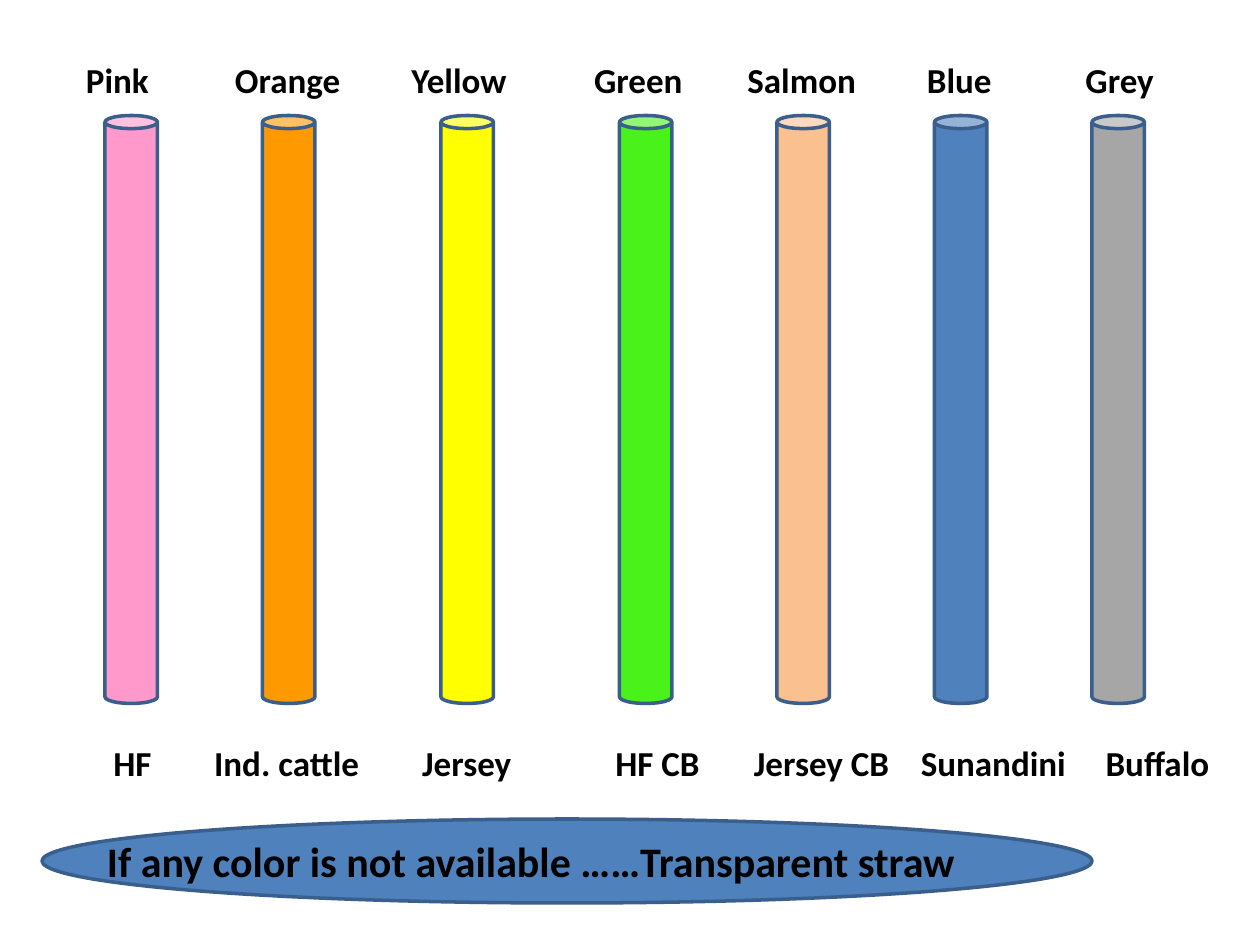
from dataclasses import dataclass

from lxml import etree
from pptx import Presentation
from pptx import util as u
from pptx.dml.color import RGBColor
from pptx.enum import shapes, text
from pptx.oxml.ns import qn

COLS, ROWS = 120, 90
CELL = u.Inches(10) // COLS


@dataclass(frozen=True)
class Theme:
    font: str = "Calibri"
    ink: str = "000000"
    accent: str = "4F81BD"
    outline: str = "3A5F8C"
    line_pt: float = 2
    label_pt: float = 20
    note_pt: float = 24


@dataclass(frozen=True)
class Straw:
    col: float
    fill: str
    color: str
    color_col: float
    breed: str
    breed_col: float


THEME = Theme()
STRAWS = [
    Straw(10, "FF99CC", "Pink", 8.2, "HF", 10.8),
    Straw(25, "FF9900", "Orange", 22.4, "Ind. cattle", 20.4),
    Straw(42, "FFFF00", "Yellow", 39.2, "Jersey", 40.2),
    Straw(59, "48F21A", "Green", 56.6, "HF CB", 58.6),
    Straw(74, "FAC090", "Salmon", 71.2, "Jersey CB", 71.8),
    Straw(89, THEME.accent, "Blue", 88.3, "Sunandini", 87.7),
    Straw(104, "A6A6A6", "Grey", 103.4, "Buffalo", 105.3),
]


def grid(*cells: float) -> list[int]:
    return [round(c * CELL) for c in cells]


def add_filled(slide, kind, box: tuple, fill: str) -> None:
    sp = slide.shapes.add_shape(kind, *grid(*box))
    sp.shadow.inherit = False
    sp.fill.solid()
    sp.fill.fore_color.rgb = RGBColor.from_string(fill)
    sp.line.color.rgb = RGBColor.from_string(THEME.outline)
    sp.line.width = u.Pt(THEME.line_pt)


def add_text(slide, box: tuple, words: str, size: float):
    sp = slide.shapes.add_textbox(*grid(*box))
    tf = sp.text_frame
    tf.word_wrap = True
    tf.auto_size = text.MSO_AUTO_SIZE.SHAPE_TO_FIT_TEXT
    p = tf.paragraphs[0]
    p.text = words
    for r in p.runs:
        r.font.name = THEME.font
        r.font.size = u.Pt(size)
        r.font.bold = True
        r.font.color.rgb = RGBColor.from_string(THEME.ink)
    return tf


def add_label_row(slide, col: float, row: float, labels: list[tuple[str, float]]) -> None:
    names, stops = zip(*labels)
    tf = add_text(slide, (col, row, 115, 5.3), "\t".join(names), THEME.label_pt)
    tf.margin_left = grid(stops[0] - col)[0]
    tabs = etree.SubElement(tf.paragraphs[0]._p.get_or_add_pPr(), qn("a:tabLst"))
    for stop in stops[1:]:
        etree.SubElement(tabs, qn("a:tab"), pos=str(grid(stop - stops[0])[0]), algn="l")


def main() -> None:
    prs = Presentation()
    prs.slide_width, prs.slide_height = grid(COLS, ROWS)
    s = prs.slides.add_slide(prs.slide_layouts[6])
    add_filled(s, shapes.MSO_SHAPE.OVAL, (4, 78, 100, 8), THEME.accent)
    for straw in STRAWS:
        add_filled(s, shapes.MSO_SHAPE.CAN, (straw.col, 11, 5, 56), straw.fill)
    add_label_row(s, 7, 5, [(x.color, x.color_col) for x in STRAWS])
    add_label_row(s, 5, 70, [(x.breed, x.breed_col) for x in STRAWS])
    add_text(s, (9, 79, 103, 6), "If any color is not available ……Transparent straw", THEME.note_pt)
    prs.save("out.pptx")


if __name__ == "__main__":
    main()
